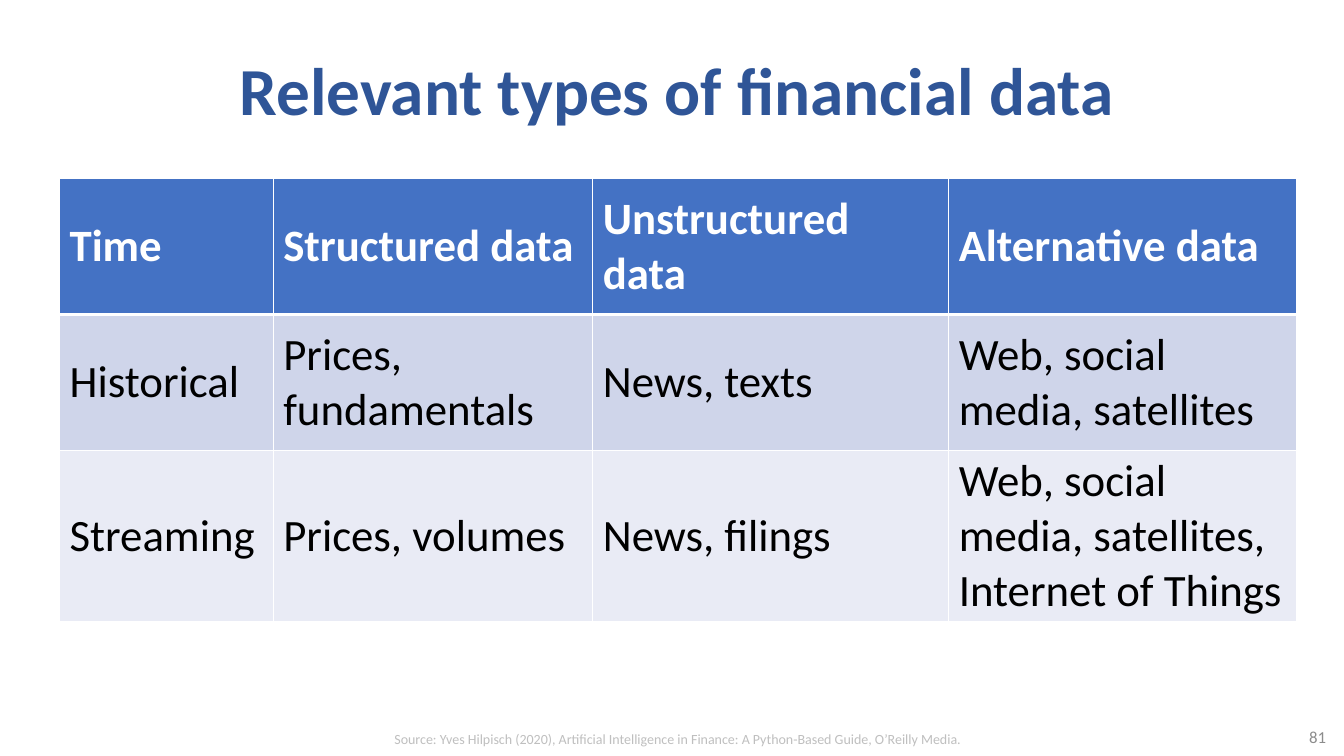
from dataclasses import dataclass

from lxml import etree
from pptx import Presentation
from pptx import util as u
from pptx.dml.color import RGBColor
from pptx.enum import text
from pptx.oxml.ns import qn

FONT = "Calibri"
WHITE = "FFFFFF"


@dataclass
class Label:
    wording: str
    left: float
    top: float
    width: float
    height: float
    size: int
    color: str
    align: text.PP_ALIGN
    anchor: text.MSO_ANCHOR
    bold: bool = False


@dataclass
class Row:
    cells: tuple[str, ...]
    fill: str
    color: str = "000000"
    bold: bool = False
    top_line: float = 1
    bottom_line: float = 1


LABELS = [
    Label("Relevant types of financial data", 0.58, 0.15, 12.27, 1.45, 48, "2F5597",
          text.PP_ALIGN.CENTER, text.MSO_ANCHOR.MIDDLE, bold=True),
    Label("81", 12.2, 7.18, 1.05, 0.26, 12, "8C8C8C",
          text.PP_ALIGN.RIGHT, text.MSO_ANCHOR.MIDDLE),
    Label("Source: Yves Hilpisch (2020), Artificial Intelligence in Finance: "
          "A Python-Based Guide, O’Reilly Media.", 2.11, 7.2, 9.22, 0.27, 10, "BFBFBF",
          text.PP_ALIGN.CENTER, text.MSO_ANCHOR.TOP),
]
ROWS = [
    Row(("Time", "Structured data", "Unstructured data", "Alternative data"),
        "4472C4", color=WHITE, bold=True, bottom_line=3),
    Row(("Historical", "Prices, fundamentals", "News, texts",
         "Web, social media, satellites"), "CFD5EA", top_line=3),
    Row(("Streaming", "Prices, volumes", "News, filings",
         "Web, social media, satellites, Internet of Things"), "E9EBF5"),
]
COLUMN_WIDTHS = [2.12, 3.17, 3.53, 3.45]
ROW_HEIGHTS = [1.35, 1.35, 1.7]


def rgb(color: str) -> RGBColor:
    return RGBColor.from_string(color)


def style(paragraph, size: int, color: str, bold: bool) -> None:
    font = paragraph.font
    font.name, font.size, font.bold = FONT, u.Pt(size), bold
    font.color.rgb = rgb(color)


def add_label(page, label: Label) -> None:
    box = page.shapes.add_textbox(*map(u.Inches, (label.left, label.top,
                                                  label.width, label.height)))
    frame = box.text_frame
    frame.word_wrap = True
    frame.vertical_anchor = label.anchor
    para = frame.paragraphs[0]
    para.text = label.wording
    para.alignment = label.align
    style(para, label.size, label.color, label.bold)


def add_borders(cell, row: Row) -> None:
    properties = cell._tc.get_or_add_tcPr()
    widths = {"a:lnL": 1, "a:lnR": 1, "a:lnT": row.top_line, "a:lnB": row.bottom_line}
    for side, width in widths.items():
        line = etree.SubElement(properties, qn(side), w=str(u.Pt(width)))
        fill = etree.SubElement(line, qn("a:solidFill"))
        etree.SubElement(fill, qn("a:srgbClr"), val=WHITE)


def fill_cell(cell, wording: str, row: Row) -> None:
    add_borders(cell, row)
    cell.fill.solid()
    cell.fill.fore_color.rgb = rgb(row.fill)
    cell.vertical_anchor = text.MSO_ANCHOR.MIDDLE
    cell.margin_top = cell.margin_bottom = u.Inches(0.03)
    para = cell.text_frame.paragraphs[0]
    para.text = wording
    style(para, 32, row.color, row.bold)


def add_data_table(page) -> None:
    table = page.shapes.add_table(
        len(ROWS), len(COLUMN_WIDTHS), u.Inches(0.59), u.Inches(1.77),
        u.Inches(sum(COLUMN_WIDTHS)), u.Inches(sum(ROW_HEIGHTS))).table
    for column, width in zip(table.columns, COLUMN_WIDTHS):
        column.width = u.Inches(width)
    for table_row, height, row in zip(table.rows, ROW_HEIGHTS, ROWS):
        table_row.height = u.Inches(height)
        for cell, wording in zip(table_row.cells, row.cells):
            fill_cell(cell, wording, row)


def main() -> None:
    deck = Presentation()
    deck.slide_width, deck.slide_height = u.Inches(13.33), u.Inches(7.5)
    page = deck.slides.add_slide(deck.slide_layouts[6])

    # Title, page number and source line
    for label in LABELS:
        add_label(page, label)

    # Data types by time
    add_data_table(page)
    deck.save("out.pptx")


if __name__ == "__main__":
    main()
